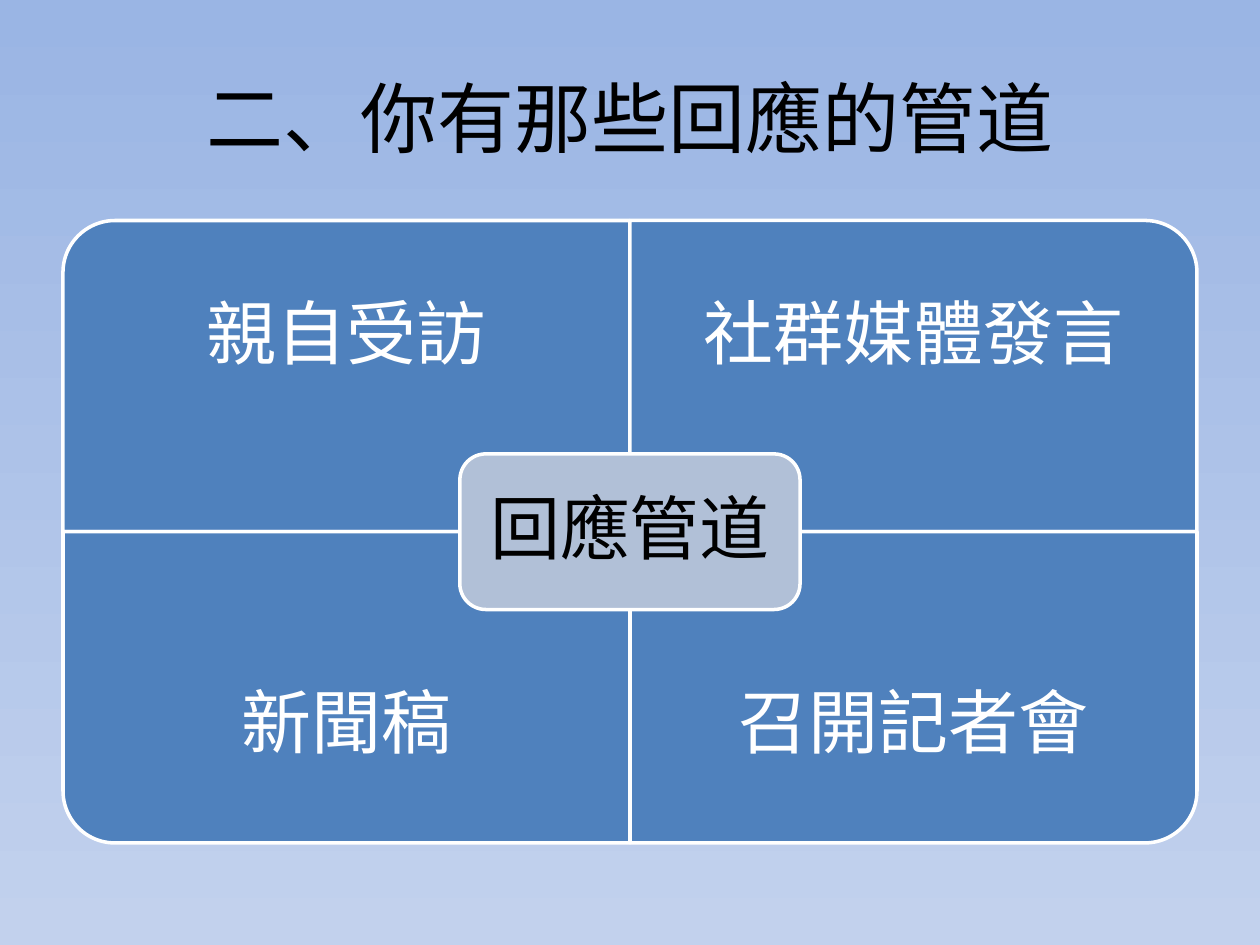
from dataclasses import dataclass
from pptx import Presentation, util as u
from pptx.dml.color import RGBColor
from pptx.enum import shapes, text

# Content: label, column, row, turn of the rounded corner
TITLE = "二、你有那些回應的管道"
CENTRE = "回應管道"
PARTS = [
    ("親自受訪", 0, 0, 270),
    ("社群媒體發言", 1, 0, 0),
    ("新聞稿", 0, 1, 180),
    ("召開記者會", 1, 1, 90),
]


@dataclass(frozen=True)
class Theme:
    top: str = "9AB5E4"
    base: str = "C2D1ED"
    tile: str = "4F81BD"
    hub: str = "B1C0D7"
    light: str = "FFFFFF"
    dark: str = "000000"
    head: str = "Arial"
    body: str = "Calibri"
    big: int = 44
    mid: int = 40
    line: int = 2
    round: float = 0.167


T = Theme()
WIDE, HIGH = 10, 7.5
LEFT, TOP = 0.05 * WIDE, 1.75
COL, ROW = 0.45 * WIDE, 2.47
MIDX, MIDY = LEFT + COL, TOP + ROW


def rgb(code):
    return RGBColor.from_string(code)


def place(item, x, y, w, h):
    item.left, item.top, item.width, item.height = map(u.Inches, (x, y, w, h))


def write(box, words, font, size, color, inset, space=None):
    frame = box.text_frame
    frame.text = words
    frame.word_wrap = True
    frame.auto_size = text.MSO_AUTO_SIZE.NONE
    frame.vertical_anchor = text.MSO_ANCHOR.MIDDLE
    frame.margin_left = frame.margin_right = u.Inches(inset[0])
    frame.margin_top = frame.margin_bottom = u.Inches(inset[1])
    para = frame.paragraphs[0]
    para.alignment = text.PP_ALIGN.CENTER
    para.line_spacing = space
    face = para.runs[0].font
    face.name, face.size = font, u.Pt(size)
    face.color.rgb = rgb(color)


def label(slide, words, x, y, w, h, color, pad):
    box = slide.shapes.add_textbox(*map(u.Inches, (x, y, w, h)))
    write(box, words, T.body, T.mid, color, (pad, pad), 0.9)


def panel(slide, kind, x, y, w, h, fill, turn=0):
    # A quarter turn swaps the sides about the same centre
    if turn % 180:
        x, y, w, h = x + (w - h) / 2, y + (h - w) / 2, h, w
    shape = slide.shapes.add_shape(kind, *map(u.Inches, (x, y, w, h)))
    shape.rotation = turn
    shape.adjustments[0] = T.round
    shape.shadow.inherit = False
    shape.fill.solid()
    shape.fill.fore_color.rgb = rgb(fill)
    shape.line.color.rgb = rgb(T.light)
    shape.line.width = u.Pt(T.line)


def main():
    deck = Presentation()
    deck.slide_width, deck.slide_height = u.Inches(WIDE), u.Inches(HIGH)
    slide = deck.slides.add_slide(deck.slide_layouts[5])

    # Background
    back = slide.background.fill
    back.gradient()
    back.gradient_angle = 270
    for stop, code in zip(back.gradient_stops, (T.top, T.base)):
        stop.color.rgb = rgb(code)

    # Title
    title = slide.shapes.title
    place(title, LEFT, 0.3, 2 * COL, 1.25)
    write(title, TITLE, T.head, T.big, T.dark, (0.1, 0.05))

    # Four tiles, with labels in the outer three quarters
    tall = 0.75 * ROW
    for words, col, row, turn in PARTS:
        x, y = LEFT + col * COL, TOP + row * ROW
        panel(slide, shapes.MSO_SHAPE.ROUND_1_RECTANGLE,
              x, y, COL, ROW, T.tile, turn)
        label(slide, words, x, y + row * (ROW - tall), COL, tall, T.light, 0.31)

    # Hub over the crossing
    w, h, edge = 0.6 * COL, 0.5 * ROW, 0.06
    x, y = MIDX - w / 2, MIDY - h / 2
    panel(slide, shapes.MSO_SHAPE.ROUNDED_RECTANGLE, x, y, w, h, T.hub)
    label(slide, CENTRE, x + edge, y + edge, w - 2 * edge, h - 2 * edge,
          T.dark, 0.17)

    deck.save("out.pptx")


if __name__ == "__main__":
    main()
